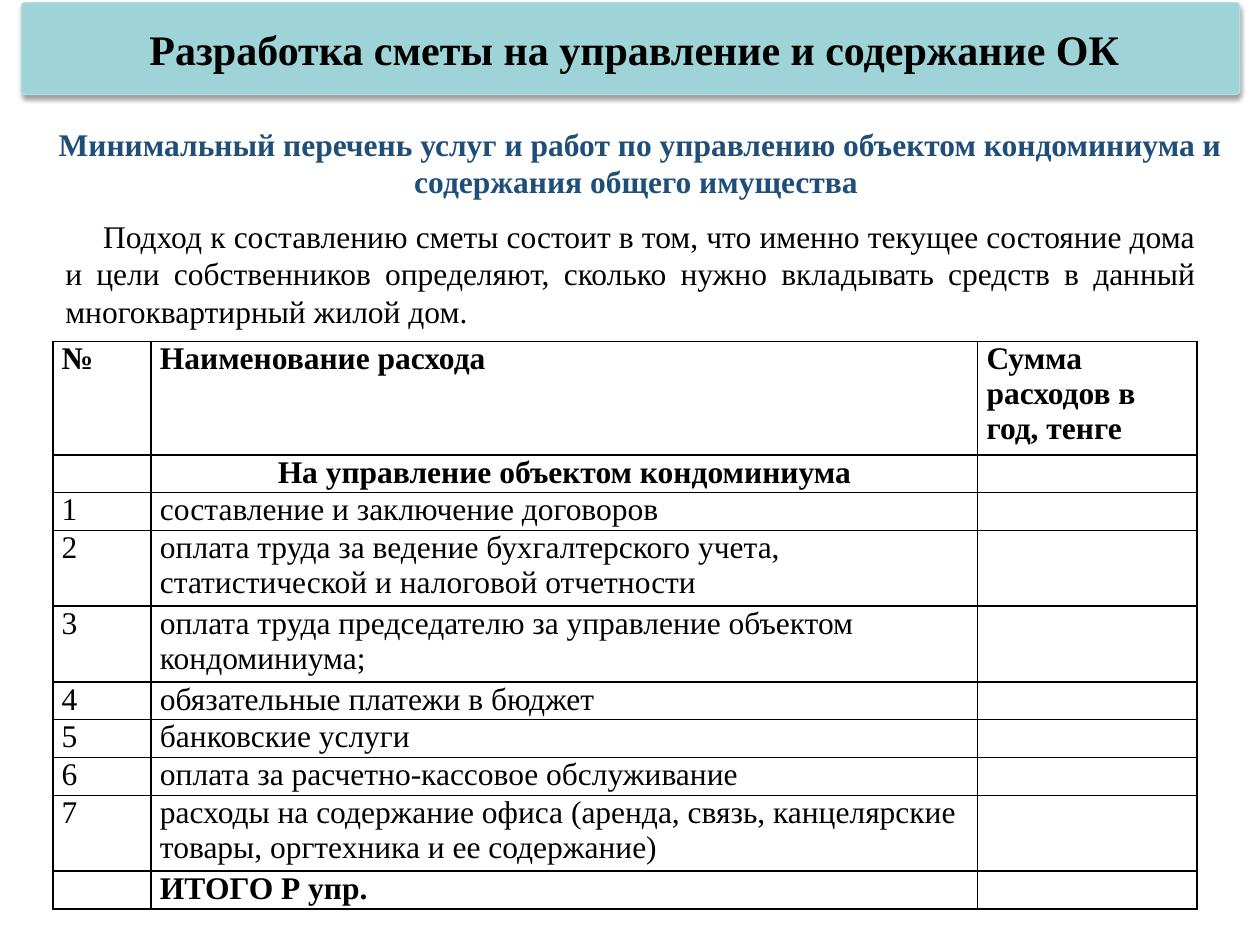
from typing import NamedTuple

from lxml.etree import SubElement
from pptx import Presentation
from pptx.dml.color import RGBColor
from pptx.enum.shapes import MSO_SHAPE
from pptx.enum.text import MSO_ANCHOR, PP_ALIGN
from pptx.oxml.ns import qn
from pptx.util import Inches, Pt

FONT = "Times New Roman"
BLACK = "000000"


class Row(NamedTuple):
    num: str
    name: str
    sum: str = ""
    lines: int = 1
    bold: bool = False
    align: PP_ALIGN = PP_ALIGN.LEFT


ROWS = [
    Row("№", "Наименование расхода", "Сумма расходов в год, тенге", 3, True),
    Row("", "На управление объектом кондоминиума", bold=True,
        align=PP_ALIGN.CENTER),
    Row("1", "составление и заключение договоров"),
    Row("2", "оплата труда за ведение бухгалтерского учета, "
        "статистической и налоговой отчетности", lines=2),
    Row("3", "оплата труда председателю за управление объектом "
        "кондоминиума;", lines=2),
    Row("4", "обязательные платежи в бюджет"),
    Row("5", "банковские услуги"),
    Row("6", "оплата за расчетно-кассовое обслуживание"),
    Row("7", "расходы на содержание офиса (аренда, связь, канцелярские "
        "товары, оргтехника и ее содержание)", lines=2),
    Row("", "ИТОГО Р упр.", bold=True),
]
COLS = [0.78, 6.56, 1.74]
LINE = 0.3


def color(code: str) -> RGBColor:
    return RGBColor.from_string(code)


def write(frame, text: str, size: int = 18, code: str = BLACK,
          bold: bool = False, align: PP_ALIGN = PP_ALIGN.LEFT):
    frame.word_wrap = True
    para = frame.paragraphs[0]
    para.text = text
    para.alignment = align
    font = para.font
    font.name, font.size, font.bold = FONT, Pt(size), bold
    font.color.rgb = color(code)
    return para


def add_text(slide, box: tuple, text: str, **style):
    frame = slide.shapes.add_textbox(*map(Inches, box)).text_frame
    return write(frame, text, **style)


def add_edges(cell) -> None:
    props = cell._tc.get_or_add_tcPr()
    for i, side in enumerate(("lnL", "lnR", "lnT", "lnB")):
        edge = props.makeelement(qn(f"a:{side}"), {"w": str(Pt(1))})
        fill = SubElement(edge, qn("a:solidFill"))
        SubElement(fill, qn("a:srgbClr"), val=BLACK)
        props.insert(i, edge)


def add_shade(shape) -> None:
    effects = SubElement(shape._element.spPr, qn("a:effectLst"))
    shade = SubElement(effects, qn("a:outerShdw"), blurRad=str(Pt(3.1)),
                       dist=str(Pt(1.6)), dir="5400000", rotWithShape="0")
    tint = SubElement(shade, qn("a:srgbClr"), val=BLACK)
    SubElement(tint, qn("a:alpha"), val="38000")


def add_costs(slide) -> None:
    high = LINE * sum(row.lines for row in ROWS)
    table = slide.shapes.add_table(
        len(ROWS), len(COLS), Inches(0.42), Inches(2.71),
        Inches(sum(COLS)), Inches(high)).table
    table.horz_banding = False
    for col, width in zip(table.columns, COLS):
        col.width = Inches(width)
    for i, row in enumerate(ROWS):
        table.rows[i].height = Inches(LINE * row.lines)
        for j, text in enumerate((row.num, row.name, row.sum)):
            cell = table.cell(i, j)
            cell.margin_left = cell.margin_right = Inches(0.07)
            cell.margin_top = cell.margin_bottom = 0
            cell.fill.background()
            add_edges(cell)
            write(cell.text_frame, text, bold=row.bold, align=row.align)


def add_title(slide) -> None:
    bar = slide.shapes.add_shape(
        MSO_SHAPE.ROUNDED_RECTANGLE, Inches(0.17), Inches(0.02),
        Inches(9.67), Inches(0.73))
    bar.adjustments[0] = 0.044
    bar.fill.solid()
    bar.fill.fore_color.rgb = color("9ED3D7")
    bar.line.color.rgb = color("B6DCDF")
    bar.line.width = Pt(0.75)
    add_shade(bar)
    frame = bar.text_frame
    frame.vertical_anchor = MSO_ANCHOR.MIDDLE
    frame.margin_left, frame.margin_right = Inches(0.06), 0
    write(frame, "Разработка сметы на управление и содержание ОК",
          size=24, bold=True, align=PP_ALIGN.CENTER)


def main() -> None:
    deck = Presentation()
    deck.slide_width, deck.slide_height = Inches(10), Inches(7.5)
    slide = deck.slides.add_slide(deck.slide_layouts[6])

    # Subtitle and introduction
    add_text(slide, (0.33, 0.94, 9.5, 0.71),
             "Минимальный перечень услуг и работ по управлению объектом "
             "кондоминиума и содержания общего имущества ",
             code="1F4E79", bold=True, align=PP_ALIGN.CENTER)
    intro = add_text(
        slide, (0.42, 1.67, 9.17, 1.01),
        "Подход к составлению сметы состоит в том, что именно текущее "
        "состояние дома и цели собственников определяют, сколько нужно "
        "вкладывать средств в данный многоквартирный жилой дом.",
        align=PP_ALIGN.JUSTIFY)
    intro.space_after = Pt(6)
    intro._p.get_or_add_pPr().set("indent", str(Inches(0.3)))

    # Cost table and title bar
    add_costs(slide)
    add_title(slide)
    deck.save("out.pptx")


if __name__ == "__main__":
    main()
